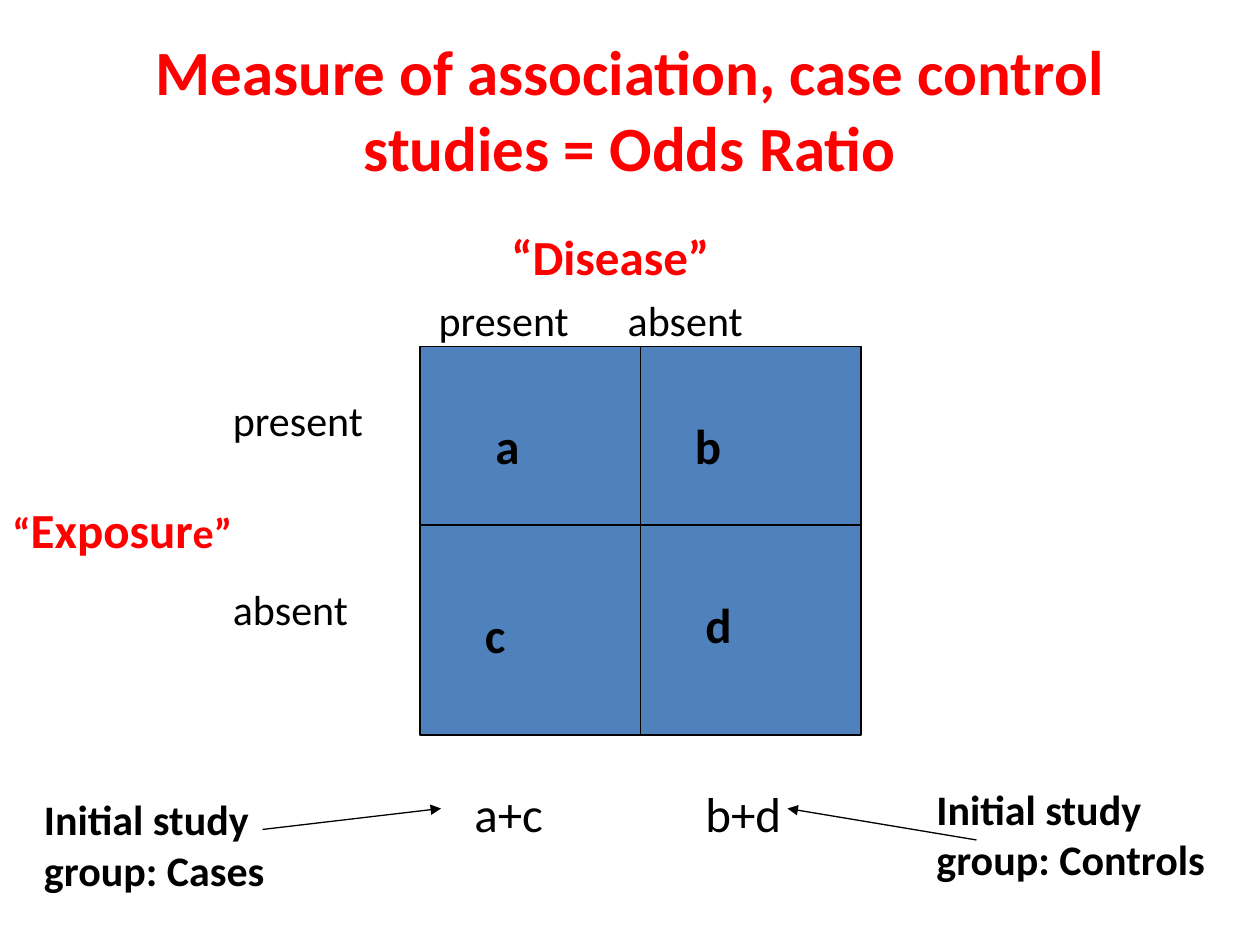
from dataclasses import dataclass

from lxml import etree
from pptx import Presentation
from pptx.dml.color import RGBColor
from pptx.enum.shapes import MSO_CONNECTOR, MSO_SHAPE
from pptx.enum.text import MSO_ANCHOR, MSO_AUTO_SIZE, PP_ALIGN
from pptx.oxml.ns import qn
from pptx.util import Pt

RED = RGBColor(0xFF, 0x00, 0x00)
BLACK = RGBColor(0x00, 0x00, 0x00)
BLUE = RGBColor(0x4F, 0x81, 0xBD)
FONT = "Calibri"


@dataclass
class Label:
    text: str
    left: float
    top: float
    width: float
    height: float
    size: float = 24
    bold: bool = False


@dataclass
class Line:
    start: tuple[float, float]
    end: tuple[float, float]
    arrow: bool = False


LABELS = [
    # Exposure rows
    Label("present", 126, 222, 90, 36),
    Label("absent", 126, 330, 90, 36),
    # Column totals
    Label("a+c", 264, 444, 72, 41, 28),
    Label("b+d", 396, 444, 66, 41, 28),
    # Study groups
    Label("Initial study group: Cases", 18, 450, 162, 65.5, bold=True),
    Label("Initial study group: Controls", 528, 444, 174, 65.5, bold=True),
    # Cells
    Label("a", 276, 234, 48, 41, 28, True),
    Label("b", 390, 234, 54, 41, 28, True),
    Label("c", 270, 342, 54, 41, 28, True),
    Label("d", 396, 336, 48, 41, 28, True),
]
ROW_DIVIDER = Line((240, 300), (492, 300))
GROUP_ARROWS = [
    Line((150, 474), (252, 462), arrow=True),
    Line((558, 480), (450, 462), arrow=True),
]


def set_font(font, size: float, bold: bool = False, color: RGBColor = BLACK) -> None:
    font.name = FONT
    font.size = Pt(size)
    font.bold = bold
    font.color.rgb = color


def place(shape, left: float, top: float, width: float, height: float) -> None:
    shape.left, shape.top = Pt(left), Pt(top)
    shape.width, shape.height = Pt(width), Pt(height)


def add_label(slide, label: Label):
    box = slide.shapes.add_textbox(
        Pt(label.left), Pt(label.top), Pt(label.width), Pt(label.height))
    frame = box.text_frame
    frame.word_wrap = True
    frame.auto_size = MSO_AUTO_SIZE.SHAPE_TO_FIT_TEXT
    paragraph = frame.paragraphs[0]
    paragraph.text = label.text
    set_font(paragraph.font, label.size, label.bold)
    return paragraph


def add_line(slide, line: Line):
    connector = slide.shapes.add_connector(
        MSO_CONNECTOR.STRAIGHT, *map(Pt, line.start + line.end))
    connector.line.color.rgb = BLACK
    connector.line.width = Pt(0.75)
    if line.arrow:
        outline = connector.line._get_or_add_ln()
        etree.SubElement(outline, qn("a:tailEnd"), type="triangle")
    etree.SubElement(connector._element.spPr, qn("a:effectLst"))
    return connector


def indent_heading(paragraph, left: float, tab: float | None = None) -> None:
    """Start the line at left, without a bullet, with an optional tab stop."""
    paragraph.level = 4
    paragraph.space_before = Pt(5)
    properties = paragraph._p.get_or_add_pPr()
    properties.set("marL", str(Pt(left)))
    properties.set("indent", "0")
    etree.SubElement(properties, qn("a:buNone"))
    if tab is not None:
        tabs = etree.SubElement(properties, qn("a:tabLst"))
        etree.SubElement(tabs, qn("a:tab"), pos=str(Pt(tab)), algn="l")


def add_headings(slide) -> None:
    # Title
    title = slide.shapes.title
    place(title, 36, 21.6, 648, 80.6)
    title.text_frame.vertical_anchor = MSO_ANCHOR.MIDDLE
    heading = title.text_frame.paragraphs[0]
    heading.text = "Measure of association, case control studies = Odds Ratio"
    heading.alignment = PP_ALIGN.CENTER
    set_font(heading.font, 36, True, RED)

    # Disease and its two columns
    body = slide.placeholders[1]
    place(body, 36, 126, 648, 356.4)
    disease = body.text_frame.paragraphs[0]
    disease.text = "“Disease”"
    indent_heading(disease, 249)
    set_font(disease.font, 28, True, RED)
    columns = body.text_frame.add_paragraph()
    columns.text = "present\tabsent"
    indent_heading(columns, 207.5, tab=341.5)
    set_font(columns.font, 24)


def add_grid(slide) -> None:
    grid = slide.shapes.add_shape(
        MSO_SHAPE.RECTANGLE, Pt(240), Pt(198), Pt(252), Pt(222))
    grid.shadow.inherit = False
    grid.fill.solid()
    grid.fill.fore_color.rgb = BLUE
    grid.line.color.rgb = BLACK
    grid.line.width = Pt(0.75)
    column_divider = add_line(slide, Line((366, 198), (366, 420)))
    column_divider.begin_connect(grid, 0)
    column_divider.end_connect(grid, 2)
    add_line(slide, ROW_DIVIDER)


def add_exposure(slide) -> None:
    exposure = add_label(slide, Label("“", 0, 282, 168, 41, bold=True))
    exposure.font.color.rgb = RED
    for text, size in (("Exposur", 28), ("e”", 24)):
        run = exposure.add_run()
        run.text = text
        run.font.size = Pt(size)


def main() -> None:
    presentation = Presentation()
    presentation.slide_width, presentation.slide_height = Pt(720), Pt(540)
    slide = presentation.slides.add_slide(presentation.slide_layouts[1])
    add_headings(slide)
    add_grid(slide)
    add_exposure(slide)
    for label in LABELS:
        add_label(slide, label)
    for arrow in GROUP_ARROWS:
        add_line(slide, arrow)
    presentation.save("out.pptx")


if __name__ == "__main__":
    main()
